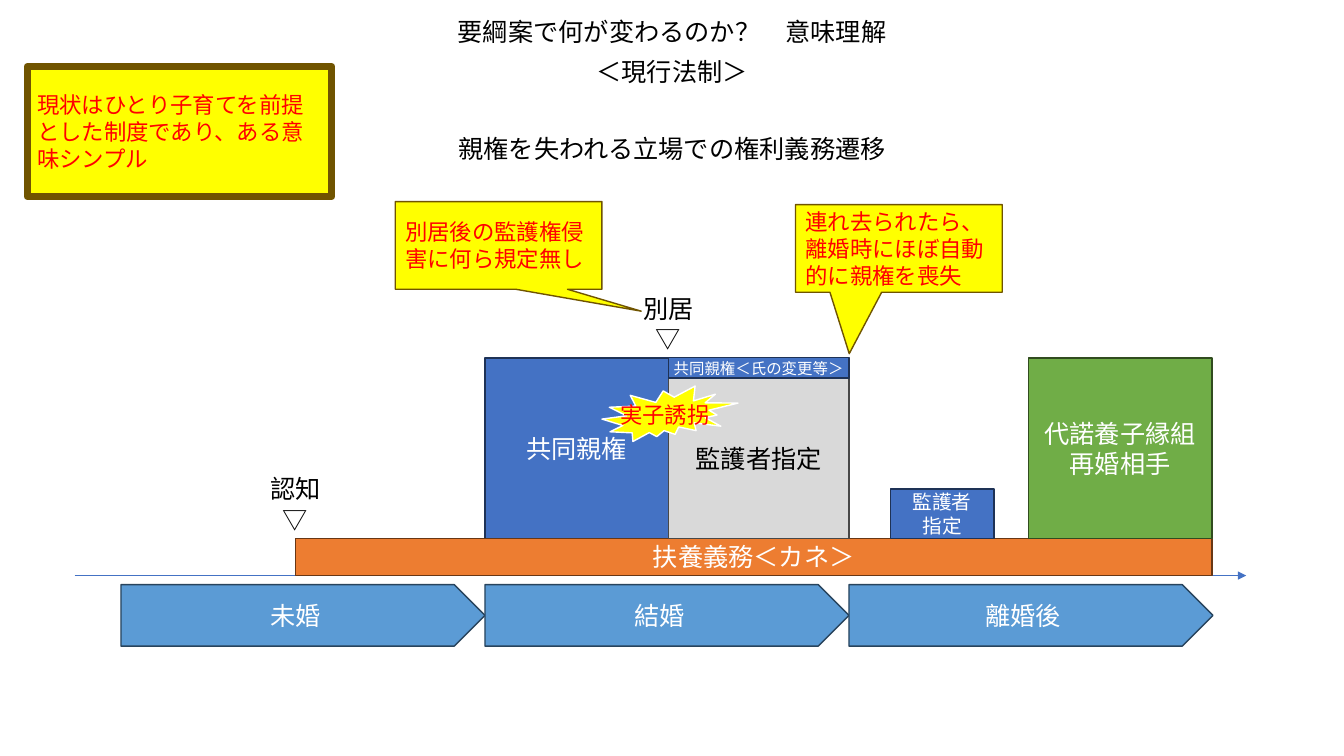
from dataclasses import dataclass

import pptx
import pptx.dml.color
import pptx.enum.shapes
import pptx.enum.text
import pptx.oxml.ns
import pptx.util
from lxml import etree

Inches = pptx.util.Inches
Shape = pptx.enum.shapes.MSO_SHAPE
Align = pptx.enum.text.PP_ALIGN
qn = pptx.oxml.ns.qn


@dataclass(frozen=True)
class Theme:
    font: str = "Noto Sans CJK JP"
    black: str = "000000"
    white: str = "FFFFFF"
    red: str = "FF0000"
    axis: str = "4472C4"
    # Fill and outline pairs
    blue: tuple = ("4472C4", "1E3256")
    orange: tuple = ("ED7D31", "683715")
    gray: tuple = ("D9D9D9", "484848")
    sky: tuple = ("5B9BD5", "28445D")
    green: tuple = ("70AD47", "314C1F")
    note: tuple = ("FFFF00", "705400")
    burst: tuple = ("FFFF00", "FFFFFF")
    # Type sizes
    body: float = 18
    remark: float = 16
    small: float = 14
    tiny: float = 11


THEME = Theme()


def rgb(code):
    return pptx.dml.color.RGBColor.from_string(code)


def write(frame, lines, size, color, align=Align.CENTER, wrap=True):
    frame.word_wrap = wrap
    for i, line in enumerate(lines):
        paragraph = frame.add_paragraph() if i else frame.paragraphs[0]
        paragraph.alignment = align
        run = paragraph.add_run()
        run.text = line
        run.font.size = pptx.util.Pt(size)
        run.font.name = THEME.font
        run.font.color.rgb = rgb(color)
        east_asian = etree.SubElement(run.font._element, qn("a:ea"))
        east_asian.set("typeface", THEME.font)


def add_block(slide, box, lines, colors, kind=Shape.RECTANGLE, size=THEME.body,
              color=THEME.white, align=Align.CENTER, wrap=True, line_width=1):
    block = slide.shapes.add_shape(kind, *map(Inches, box))
    block.shadow.inherit = False
    fill, line = colors
    block.fill.solid()
    block.fill.fore_color.rgb = rgb(fill)
    block.line.color.rgb = rgb(line)
    block.line.width = pptx.util.Pt(line_width)
    block.text_frame.vertical_anchor = pptx.enum.text.MSO_ANCHOR.MIDDLE
    write(block.text_frame, lines, size, color, align, wrap)
    return block


def add_label(slide, box, lines):
    label = slide.shapes.add_textbox(*map(Inches, box))
    write(label.text_frame, lines, THEME.body, THEME.black, wrap=False)
    label.text_frame.auto_size = pptx.enum.text.MSO_AUTO_SIZE.SHAPE_TO_FIT_TEXT


def add_headings(slide, box):
    left, top, width, _ = box
    headings = [
        (0, "要綱案で何が変わるのか？　意味理解"),
        (0.4, "＜現行法制＞"),
        (1.16, "親権を失われる立場での権利義務遷移"),
    ]
    for offset, heading in headings:
        add_label(slide, (left, top + offset, width, 0.4), [heading])


def add_timeline(slide, box):
    left, top, width, height = box
    # Time axis
    axis_y = Inches(top - 0.09)
    axis = slide.shapes.add_connector(
        pptx.enum.shapes.MSO_CONNECTOR.STRAIGHT,
        Inches(left - 0.46), axis_y, Inches(left + width + 0.33), axis_y)
    axis.line.color.rgb = rgb(THEME.axis)
    axis.line.width = pptx.util.Pt(0.5)
    arrowhead = etree.SubElement(axis.line._get_or_add_ln(), qn("a:tailEnd"))
    arrowhead.set("type", "triangle")
    etree.SubElement(axis._element.spPr, qn("a:effectLst"))
    # Life phases
    phases = ["未婚", "結婚", "離婚後"]
    step = width / len(phases)
    for i, phase in enumerate(phases):
        add_block(slide, (left + i * step, top, step, height), [phase],
                  THEME.sky, Shape.PENTAGON)


def add_rights(slide, box):
    left, top, width, height = box
    right, duty_height = left + width, 0.37
    floor = top + height - duty_height
    marriage, separation, divorce = left + 1.88, left + 3.7, left + 5.49
    married_width, separated_width = separation - marriage, divorce - separation
    full, strip = floor - top, 0.2

    # Rights standing on the support duty
    add_block(slide, (marriage, top, married_width, full), ["共同親権"], THEME.blue)
    add_block(slide, (left, floor, width, duty_height), ["扶養義務＜カネ＞"], THEME.orange)
    add_block(slide, (separation, top + strip, separated_width, full - strip),
              ["監護者指定"], THEME.gray, color=THEME.black)
    add_block(slide, (right - married_width, top, married_width, full),
              ["代諾養子縁組", "再婚相手"], THEME.green)
    add_block(slide, (left + 5.9, floor - 0.49, 1.03, 0.49), ["監護者", "指定"],
              THEME.blue, size=THEME.small)
    add_block(slide, (separation, top, separated_width, strip),
              ["共同親権＜氏の変更等＞"], THEME.blue, size=THEME.tiny, wrap=False)

    # Events on the time axis
    label_size = 0.71
    for event, x, base in [("認知", left, floor), ("別居", separation, top)]:
        add_label(slide, (x - label_size / 2, base - label_size + 0.02,
                          label_size, label_size), [event, "▽"])
    add_block(slide, (separation - 0.66, top + 0.28, 1.35, 0.55), ["実子誘拐"],
              THEME.burst, Shape.EXPLOSION2, THEME.remark, THEME.red, wrap=False)


def add_remark(slide, box, remark, pointer=None, line_width=1):
    kind = Shape.RECTANGULAR_CALLOUT if pointer else Shape.RECTANGLE
    block = add_block(slide, box, [remark], THEME.note, kind, THEME.remark,
                      THEME.red, Align.LEFT, line_width=line_width)
    for i, offset in enumerate(pointer or ()):
        block.adjustments[i] = offset


def main():
    deck = pptx.Presentation()
    deck.slide_width, deck.slide_height = Inches(13.33), Inches(7.5)
    slide = deck.slides.add_slide(deck.slide_layouts[6])

    add_headings(slide, (4.42, 0.11, 4.49, 1.56))
    add_timeline(slide, (1.2, 5.8, 10.83, 0.61))
    add_rights(slide, (2.93, 3.55, 9.09, 2.16))
    add_remark(slide, (3.92, 2, 2.05, 0.87), "別居後の監護権侵害に何ら規定無し",
               pointer=(0.69, 0.75))
    add_remark(slide, (7.89, 2.03, 2.05, 0.87),
               "連れ去られたら、離婚時にほぼ自動的に親権を喪失", pointer=(-0.24, 1.2))
    add_remark(slide, (0.27, 0.66, 3.02, 1.29),
               "現状はひとり子育てを前提とした制度であり、ある意味シンプル", line_width=5.25)

    deck.save("out.pptx")


if __name__ == "__main__":
    main()
